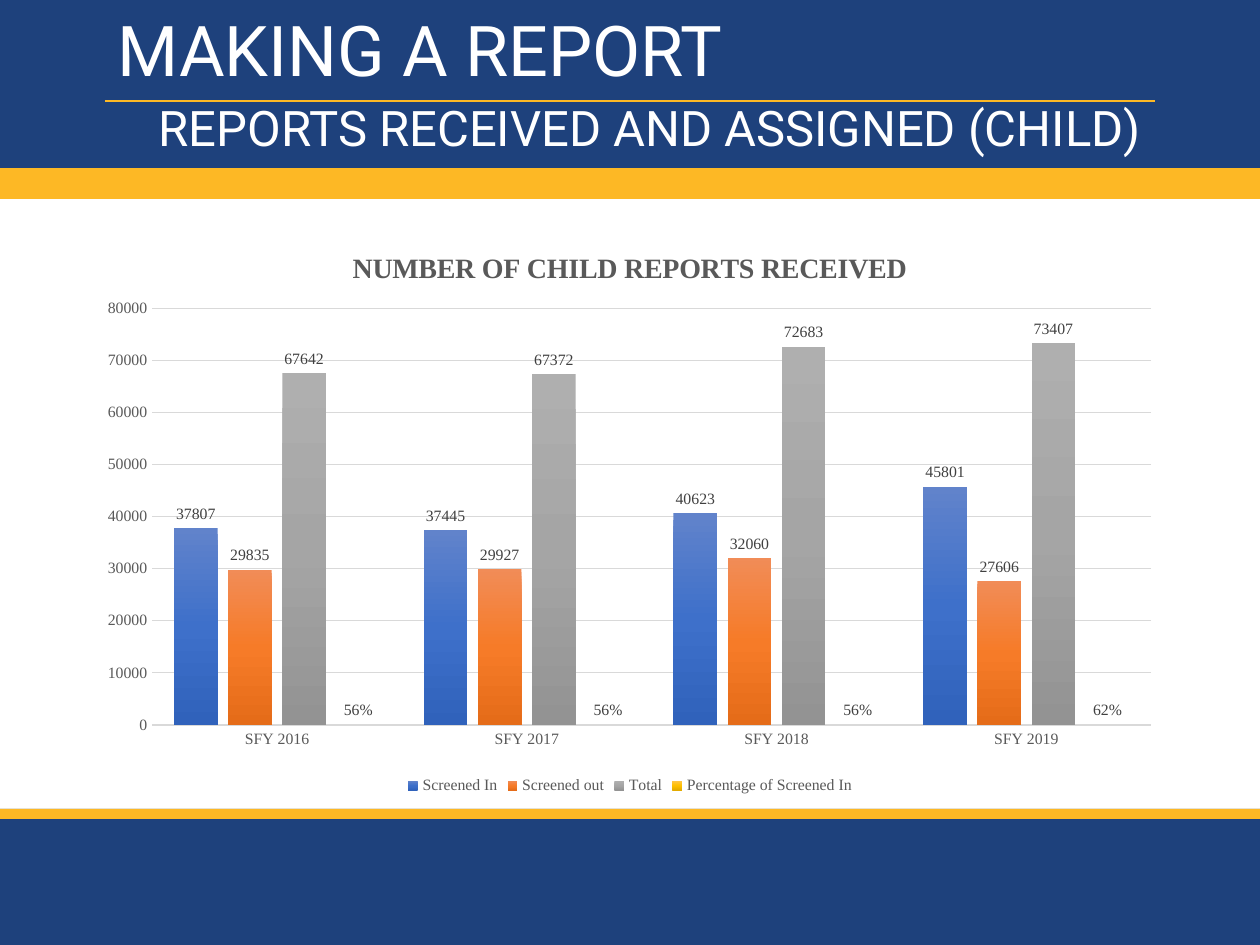
from copy import deepcopy

from lxml.etree import SubElement
from pptx import Presentation
from pptx.chart.data import CategoryChartData
from pptx.dml.color import RGBColor
from pptx.enum.chart import XL_CHART_TYPE, XL_LABEL_POSITION, XL_LEGEND_POSITION, XL_TICK_MARK
from pptx.enum.shapes import MSO_CONNECTOR, MSO_SHAPE
from pptx.enum.text import MSO_ANCHOR, MSO_AUTO_SIZE, PP_ALIGN
from pptx.oxml.ns import qn
from pptx.util import Emu, Pt

EMU_PER_PX = 914400 / 126
NAVY, GOLD, WHITE = "1E417C", "FDB825", "FFFFFF"
DARK_GREY, LABEL_GREY, LIGHT_GREY = "595959", "404040", "D9D9D9"
HEADING_FONT, CHART_FONT = "Roboto", "Times New Roman"

YEARS = ["SFY 2016", "SFY 2017", "SFY 2018", "SFY 2019"]
SERIES = [
    ("Screened In", [37807, 37445, 40623, 45801], "General", ["6183CB", "3E70CA", "3062BB"]),
    ("Screened out", [29835, 29927, 32060, 27606], "General", ["F18C57", "F67B28", "E56C19"]),
    ("Total", [67642, 67372, 72683, 73407], "General", ["AFAFAF", "A5A5A5", "939393"]),
    ("Percentage of Screened In", [0.56, 0.56, 0.56, 0.62], "0%", ["FFC64B", "FFC000", "E3AB00"]),
]


def px(value):
    return Emu(round(value * EMU_PER_PX))


def color(value):
    return RGBColor.from_string(value)


def style_font(font, name, size, font_color, bold=False):
    font.name = name
    font.size = Pt(size)
    font.bold = bold
    font.color.rgb = color(font_color)


def add_band(slide, top, height, fill_color):
    band = slide.shapes.add_shape(MSO_SHAPE.RECTANGLE, 0, px(top), px(1260), px(height))
    band.shadow.inherit = False
    band.fill.solid()
    band.fill.fore_color.rgb = color(fill_color)
    band.line.fill.background()


def add_rule(slide, left, right, top):
    rule = slide.shapes.add_connector(MSO_CONNECTOR.STRAIGHT, px(left), px(top), px(right), px(top))
    rule.line.color.rgb = color(GOLD)
    rule.line.width = Pt(1)
    SubElement(rule._element.spPr, qn("a:effectLst"))


def fill_heading(slide, placeholder, text, top, size, anchor, alignment):
    slide.shapes._spTree.append(placeholder._element)
    placeholder.left, placeholder.top = px(105), px(top)
    placeholder.width, placeholder.height = px(1048), px(74)
    frame = placeholder.text_frame
    frame.text = text
    frame.word_wrap = True
    frame.auto_size = MSO_AUTO_SIZE.NONE
    frame.vertical_anchor = anchor
    paragraph = frame.paragraphs[0]
    paragraph.alignment = alignment
    paragraph.line_spacing = 0.9
    paragraph.space_before = Pt(0)
    style_font(paragraph.font, HEADING_FONT, size, WHITE)


def set_layout(element, index, **positions):
    for layout in element.findall(qn("c:layout")):
        element.remove(layout)
    layout = SubElement(element, qn("c:layout"))
    element.insert(index, layout)
    manual = SubElement(layout, qn("c:manualLayout"))
    if "w" in positions:
        SubElement(manual, qn("c:layoutTarget")).set("val", "inner")
    for name in ("xMode", "yMode"):
        SubElement(manual, qn(f"c:{name}")).set("val", "edge")
    for name, value in positions.items():
        SubElement(manual, qn(f"c:{name}")).set("val", str(value))


def style_series(series, number_format, gradient):
    fill = series.format.fill
    fill.gradient()
    fill.gradient_angle = 270
    stop_list = series._element.find(".//" + qn("a:gsLst"))
    stop_list.append(deepcopy(stop_list[0]))
    for stop, position, stop_color in zip(fill.gradient_stops, (0, 0.5, 1), gradient):
        stop.position = position
        stop.color.rgb = color(stop_color)
    labels = series.data_labels
    labels.show_value = True
    labels.position = XL_LABEL_POSITION.OUTSIDE_END
    labels.number_format = number_format
    labels.number_format_is_linked = False
    style_font(labels.font, CHART_FONT, 9, LABEL_GREY)


def style_axes(chart):
    for axis in (chart.category_axis, chart.value_axis):
        axis.major_tick_mark = axis.minor_tick_mark = XL_TICK_MARK.NONE
        style_font(axis.tick_labels.font, CHART_FONT, 9, DARK_GREY)
    axis_line = chart.category_axis.format.line
    axis_line.color.rgb = color(LIGHT_GREY)
    axis_line.width = Pt(1)
    value_axis = chart.value_axis
    value_axis.minimum_scale, value_axis.maximum_scale = 0, 80000
    value_axis.major_unit = 10000
    value_axis.format.line.fill.background()
    grid_line = value_axis.major_gridlines.format.line
    grid_line.color.rgb = color(LIGHT_GREY)
    grid_line.width = Pt(0.75)


def add_report_chart(slide):
    data = CategoryChartData()
    data.categories = YEARS
    for name, values, number_format, _ in SERIES:
        data.add_series(name, values, number_format)
    chart = slide.shapes.add_chart(
        XL_CHART_TYPE.COLUMN_CLUSTERED, px(87), px(222), px(1086), px(578), data
    ).chart
    style_font(chart.font, CHART_FONT, 10, "000000")

    chart.has_title = True
    title_frame = chart.chart_title.text_frame
    title_frame.text = "NUMBER OF CHILD REPORTS RECEIVED"
    style_font(title_frame.paragraphs[0].font, CHART_FONT, 16, DARK_GREY, bold=True)
    set_layout(chart.chart_title._element, 1, x=0.24, y=0.04)
    chart.chart_title.include_in_layout = False

    chart.has_legend = True
    chart.legend.position = XL_LEGEND_POSITION.BOTTOM
    chart.legend.include_in_layout = False
    style_font(chart.legend.font, CHART_FONT, 9, DARK_GREY)

    style_axes(chart)
    plot = chart.plots[0]
    plot.gap_width, plot.overlap = 100, -24
    plot.vary_by_categories = False
    for series, (_, _, number_format, gradient) in zip(plot.series, SERIES):
        style_series(series, number_format, gradient)
    set_layout(chart._chartSpace.chart.plotArea, 0, x=0.06, y=0.15, w=0.92, h=0.72)


def main():
    presentation = Presentation()
    presentation.slide_width, presentation.slide_height = px(1260), px(945)
    slide = presentation.slides.add_slide(presentation.slide_layouts[2])
    add_band(slide, 0, 179, NAVY)
    add_band(slide, 809, 136, NAVY)
    add_rule(slide, 105, 1155, 101)
    add_band(slide, 168, 31, GOLD)
    add_band(slide, 809, 10, GOLD)
    title, subtitle = slide.placeholders
    fill_heading(slide, title, "MAKING A REPORT", 24, 40, MSO_ANCHOR.BOTTOM, PP_ALIGN.LEFT)
    fill_heading(slide, subtitle, "REPORTS RECEIVED AND ASSIGNED (CHILD)", 98, 28,
                 MSO_ANCHOR.TOP, PP_ALIGN.RIGHT)
    add_report_chart(slide)
    presentation.save("out.pptx")


if __name__ == "__main__":
    main()
